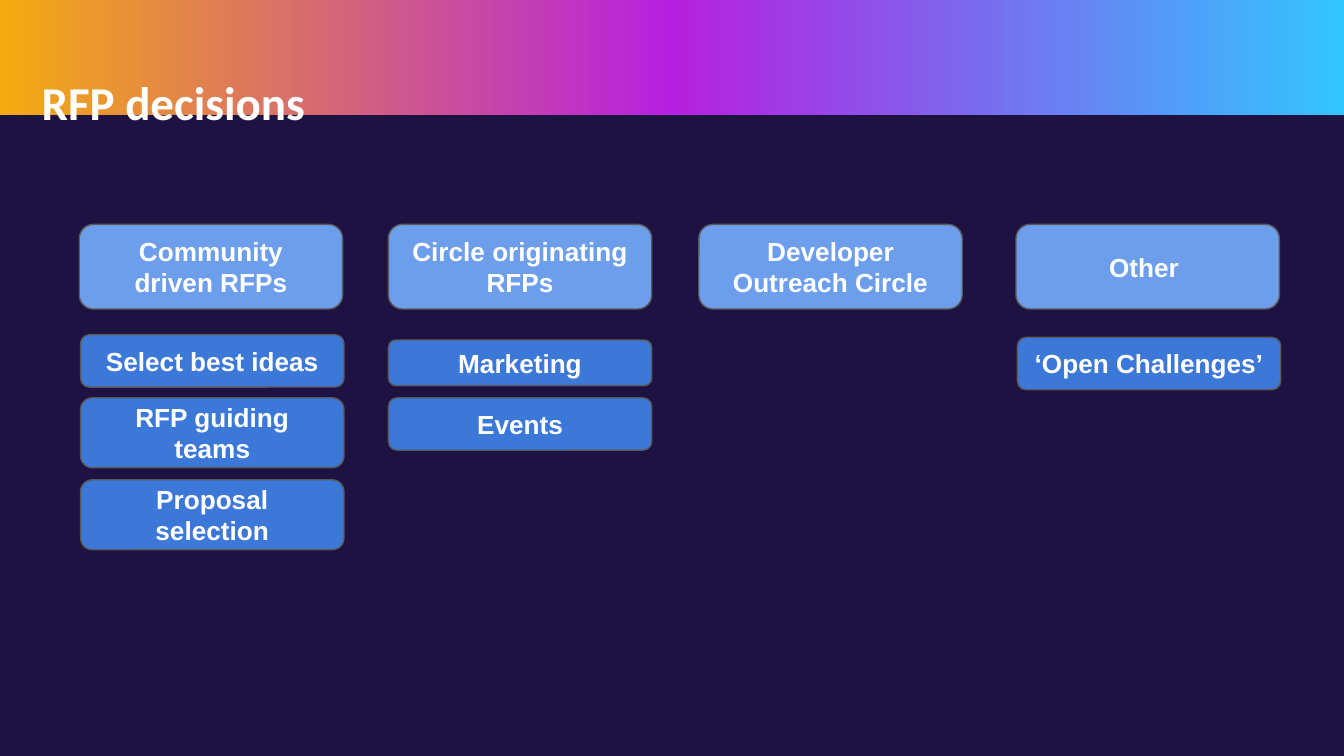
from copy import deepcopy

from pptx import Presentation
from pptx.dml.color import RGBColor
from pptx.enum.shapes import MSO_SHAPE
from pptx.enum.text import MSO_ANCHOR, PP_ALIGN
from pptx.util import Inches, Pt

RECTANGLE = MSO_SHAPE.RECTANGLE
ROUNDED = MSO_SHAPE.ROUNDED_RECTANGLE
TOP, MIDDLE = MSO_ANCHOR.TOP, MSO_ANCHOR.MIDDLE
LEFT, CENTER = PP_ALIGN.LEFT, PP_ALIGN.CENTER

COLORS = {
    "background": "1E1243",
    "orange": "F3AB10",
    "purple": "B620E0",
    "cyan": "32C5FF",
    "header": "6D9EEB",
    "item": "3C78D8",
    "outline": "595959",
    "text": "FFFFFF",
}
BOX_WIDTH = 1.96
HEADER_TOP, HEADER_HEIGHT = 1.67, 0.63

# Each column: header, header left, item left, items as (text, top, height)
COLUMNS = [
    ("Community driven RFPs", 0.59, 0.6, [
        ("Select best ideas", 2.49, 0.39),
        ("RFP guiding teams", 2.96, 0.52),
        ("Proposal selection", 3.57, 0.52),
    ]),
    ("Circle originating RFPs", 2.89, 2.89, [
        ("Marketing", 2.53, 0.34),
        ("Events", 2.96, 0.39),
    ]),
    ("Developer Outreach Circle", 5.2, 5.2, []),
    ("Other ", 7.56, 7.57, [("‘Open Challenges’", 2.51, 0.39)]),
]


def write_text(shape, text, font_name, size, alignment, anchor):
    frame = shape.text_frame
    frame.word_wrap = True
    frame.vertical_anchor = anchor
    frame.margin_left = frame.margin_right = Inches(0.1)
    frame.margin_top = frame.margin_bottom = Inches(0.1)
    frame.text = text
    paragraph = frame.paragraphs[0]
    paragraph.alignment = alignment
    paragraph.font.name = font_name
    paragraph.font.size = Pt(size)
    paragraph.font.bold = True
    paragraph.font.color.rgb = RGBColor.from_string(COLORS["text"])
    return paragraph


def add_box(text, left, top, height, color):
    shape = slide.shapes.add_shape(
        ROUNDED, Inches(left), Inches(top), Inches(BOX_WIDTH), Inches(height))
    shape.shadow.inherit = False
    shape.fill.solid()
    shape.fill.fore_color.rgb = RGBColor.from_string(COLORS[color])
    shape.line.color.rgb = RGBColor.from_string(COLORS["outline"])
    shape.line.width = Pt(0.75)
    write_text(shape, text, "Arial", 14, CENTER, MIDDLE)


presentation = Presentation()
presentation.slide_width = Inches(10)
presentation.slide_height = Inches(10 * 9 / 16)
slide = presentation.slides.add_slide(presentation.slide_layouts[5])
slide.background.fill.solid()
slide.background.fill.fore_color.rgb = RGBColor.from_string(COLORS["background"])

# Gradient band, placed behind the title
band = slide.shapes.add_shape(RECTANGLE, 0, 0, Inches(10), Inches(0.86))
band.shadow.inherit = False
band.line.fill.background()
band.fill.gradient()
band.fill.gradient_angle = 0
first_stop = band.fill._fill._gradFill.gsLst[0]
first_stop.addnext(deepcopy(first_stop))
for stop, position, color in zip(
        band.fill.gradient_stops, (0, 0.5, 1), ("orange", "purple", "cyan")):
    stop.position = position
    stop.color.rgb = RGBColor.from_string(COLORS[color])

title = slide.shapes.title
title.left, title.top = Inches(0.21), Inches(0.24)
title.width, title.height = Inches(9.32), Inches(0.63)
title_paragraph = write_text(title, "RFP decisions", "Calibri", 25.2, LEFT, TOP)
title_paragraph.line_spacing = 1.5
title_paragraph.space_before = Pt(0)
title._element.addprevious(band._element)

for header, header_left, item_left, items in COLUMNS:
    add_box(header, header_left, HEADER_TOP, HEADER_HEIGHT, "header")
    for text, top, height in items:
        add_box(text, item_left, top, height, "item")

presentation.save("out.pptx")
